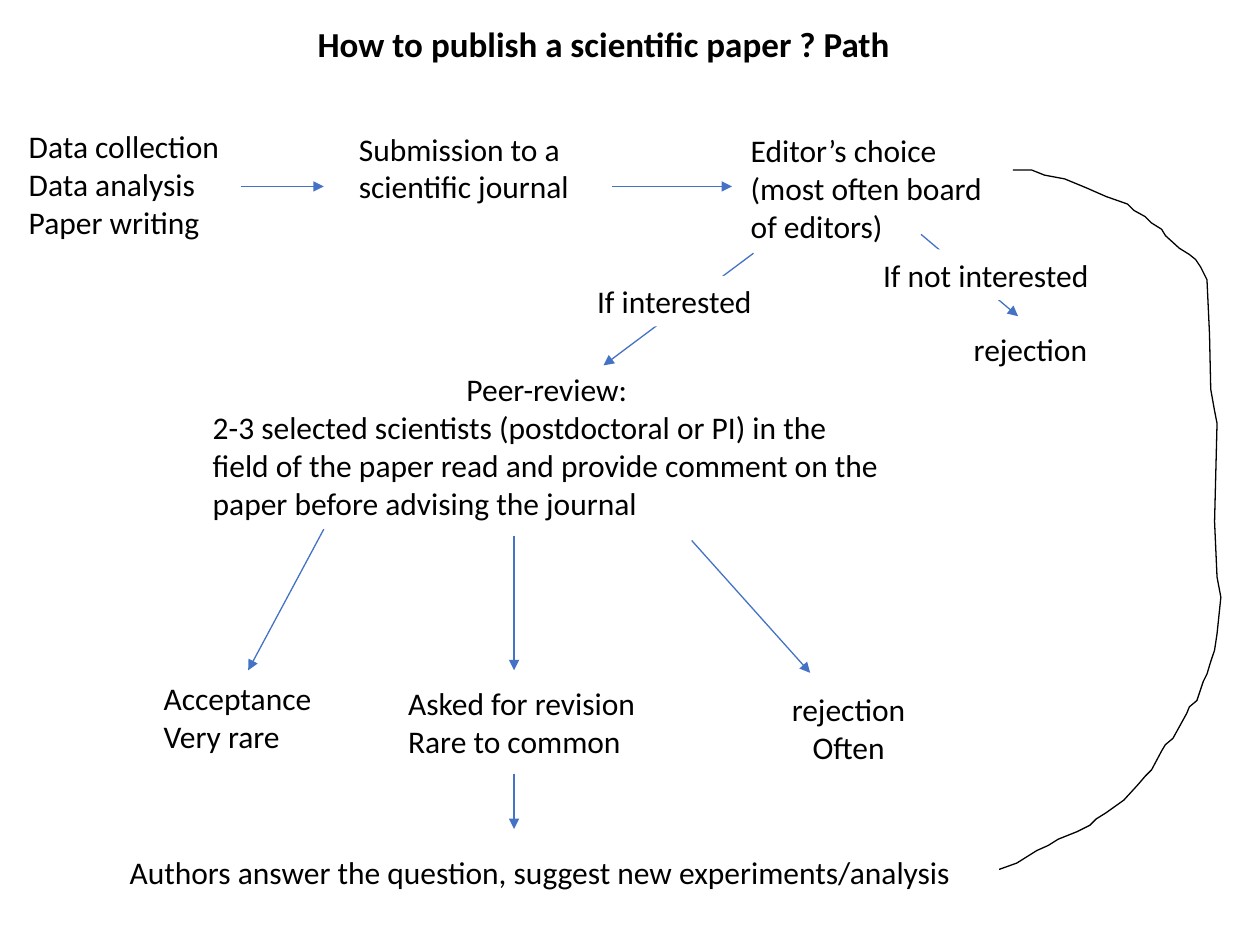
from dataclasses import dataclass

from lxml.etree import SubElement
from pptx import Presentation
from pptx.dml.color import RGBColor
from pptx.enum.shapes import MSO_CONNECTOR, MSO_SHAPE
from pptx.enum.text import MSO_ANCHOR, PP_ALIGN
from pptx.oxml.ns import qn
from pptx.util import Inches, Pt


@dataclass(frozen=True)
class Theme:
    font: str = "Calibri"
    ink: RGBColor = RGBColor(0, 0, 0)
    paper: RGBColor = RGBColor(255, 255, 255)
    accent: RGBColor = RGBColor(0x44, 0x72, 0xC4)
    title: Pt = Pt(20)
    body: Pt = Pt(18)
    rule: Pt = Pt(0.75)


STEPS = [
    ((0.13, 0.96, 1.73, 1.01), "Data collection\nData analysis\nPaper writing"),
    ((2.75, 0.98, 2.06, 0.71), "Submission to a scientific journal"),
    ((5.86, 0.99, 2.06, 1.01), "Editor’s choice\n(most often board of editors)"),
    ((7.63, 2.57, 1.13, 0.4), "rejection"),
    ((1.2, 5.34, 1.39, 0.71), "Acceptance\nVery rare"),
    ((3.14, 5.38, 2.02, 0.71), "Asked for revision\nRare to common"),
    ((0.93, 6.72, 6.79, 0.4),
     "Authors answer the question, suggest new experiments/analysis"),
]
PEER_REVIEW = (
    "Peer-review:\n2-3 selected scientists (postdoctoral or PI) in the field of the "
    "paper read and provide comment on the paper before advising the journal"
)
ARROWS = [
    (1.91, 1.48, 2.57, 1.48),
    (4.86, 1.48, 5.81, 1.48),
    (5.98, 2.01, 4.79, 2.9),
    (7.31, 1.86, 8.08, 2.51),
    (2.57, 4.2, 1.97, 5.32),
    (4.08, 4.25, 4.08, 5.32),
    (5.49, 4.29, 6.43, 5.34),
    (4.08, 6.14, 4.08, 6.58),
]
CONDITIONS = [
    ((4.64, 2.19, 1.44, 0.4), "If interested"),
    ((6.91, 1.98, 1.85, 0.4), "If not interested"),
]
RETURN_PATH = [
    (7.93, 6.9), (8.07, 6.85), (8.15, 6.8), (8.23, 6.75), (8.32, 6.71),
    (8.4, 6.66), (8.55, 6.6), (8.65, 6.55), (8.7, 6.5), (8.78, 6.45),
    (8.85, 6.4), (8.92, 6.35), (9.03, 6.23), (9.09, 6.16), (9.14, 6.11),
    (9.22, 5.96), (9.25, 5.91), (9.31, 5.86), (9.42, 5.66), (9.44, 5.61),
    (9.5, 5.56), (9.55, 5.41), (9.58, 5.35), (9.61, 5.25), (9.64, 5.16),
    (9.66, 5.03), (9.69, 4.74), (9.66, 4.58), (9.64, 4.14), (9.66, 3.36),
    (9.64, 3.26), (9.61, 3.09), (9.6, 2.65), (9.58, 2.22), (9.53, 2.12),
    (9.49, 2.06), (9.44, 2.02), (9.36, 1.97), (9.25, 1.87), (9.22, 1.82),
    (9.14, 1.77), (9.09, 1.72), (9, 1.67), (8.95, 1.62), (8.78, 1.56),
    (8.62, 1.49), (8.45, 1.42), (8.29, 1.39), (8.19, 1.35), (8.04, 1.35),
]


class Deck:
    """Draws styled elements on the current slide."""

    def __init__(self, theme):
        self.theme = theme
        self.prs = Presentation()
        self.prs.slide_width, self.prs.slide_height = Inches(10), Inches(7.5)
        self.s = self.prs.slides.add_slide(self.prs.slide_layouts[5])

    def set_text(self, sp, text, size, bold=False, align=PP_ALIGN.LEFT):
        tf = sp.text_frame
        tf.text = text
        tf.word_wrap = True
        tf.vertical_anchor = MSO_ANCHOR.TOP
        for p in tf.paragraphs:
            p.alignment = align
            for r in p.runs:
                r.font.name, r.font.size, r.font.bold = self.theme.font, size, bold
                r.font.color.rgb = self.theme.ink

    def title(self, box, text):
        sp = self.s.shapes.title
        sp.left, sp.top, sp.width, sp.height = map(Inches, box)
        self.set_text(sp, text, self.theme.title, bold=True)

    def text(self, box, text, align=PP_ALIGN.LEFT):
        sp = self.s.shapes.add_textbox(*map(Inches, box))
        self.set_text(sp, text, self.theme.body, align=align)
        return sp

    def label(self, box, text):
        sp = self.s.shapes.add_shape(MSO_SHAPE.RECTANGLE, *map(Inches, box))
        sp.shadow.inherit = False
        sp.fill.solid()
        sp.fill.fore_color.rgb = self.theme.paper
        sp.line.fill.background()
        self.set_text(sp, text, self.theme.body)

    def arrow(self, ends):
        cxn = self.s.shapes.add_connector(MSO_CONNECTOR.STRAIGHT, *map(Inches, ends))
        cxn.line.color.rgb = self.theme.accent
        cxn.line.width = self.theme.rule
        spPr = cxn.element.spPr
        SubElement(spPr.find(qn("a:ln")), qn("a:tailEnd"), type="triangle")
        SubElement(spPr, qn("a:effectLst"))

    def curve(self, points):
        start, *rest = [(Inches(x), Inches(y)) for x, y in points]
        fb = self.s.shapes.build_freeform(*start)
        fb.add_line_segments(rest, close=False)
        sp = fb.convert_to_shape()
        sp.shadow.inherit = False
        sp.fill.background()
        sp.line.color.rgb = self.theme.ink
        sp.line.width = self.theme.rule


def main():
    deck = Deck(Theme())
    deck.title((2.42, 0.13, 4.78, 0.44), "How to publish a scientific paper ? Path")
    for box, text in STEPS:
        deck.text(box, text)
    review = deck.text((1.59, 2.89, 5.5, 1.31), PEER_REVIEW)
    review.text_frame.paragraphs[0].alignment = PP_ALIGN.CENTER
    deck.text((6.17, 5.43, 1.13, 0.71), "rejection\nOften", PP_ALIGN.CENTER)
    for ends in ARROWS:
        deck.arrow(ends)
    for box, text in CONDITIONS:
        deck.label(box, text)
    deck.curve(RETURN_PATH)
    deck.prs.save("out.pptx")


if __name__ == "__main__":
    main()
